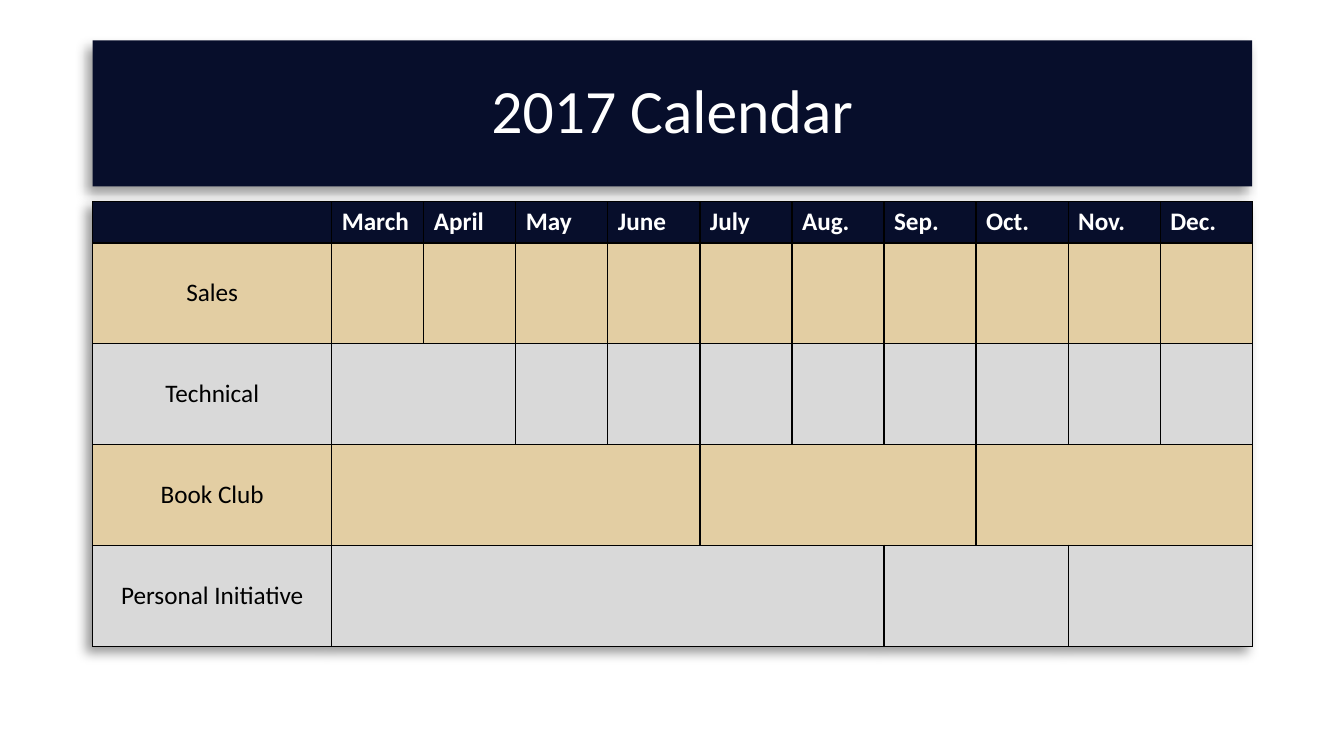
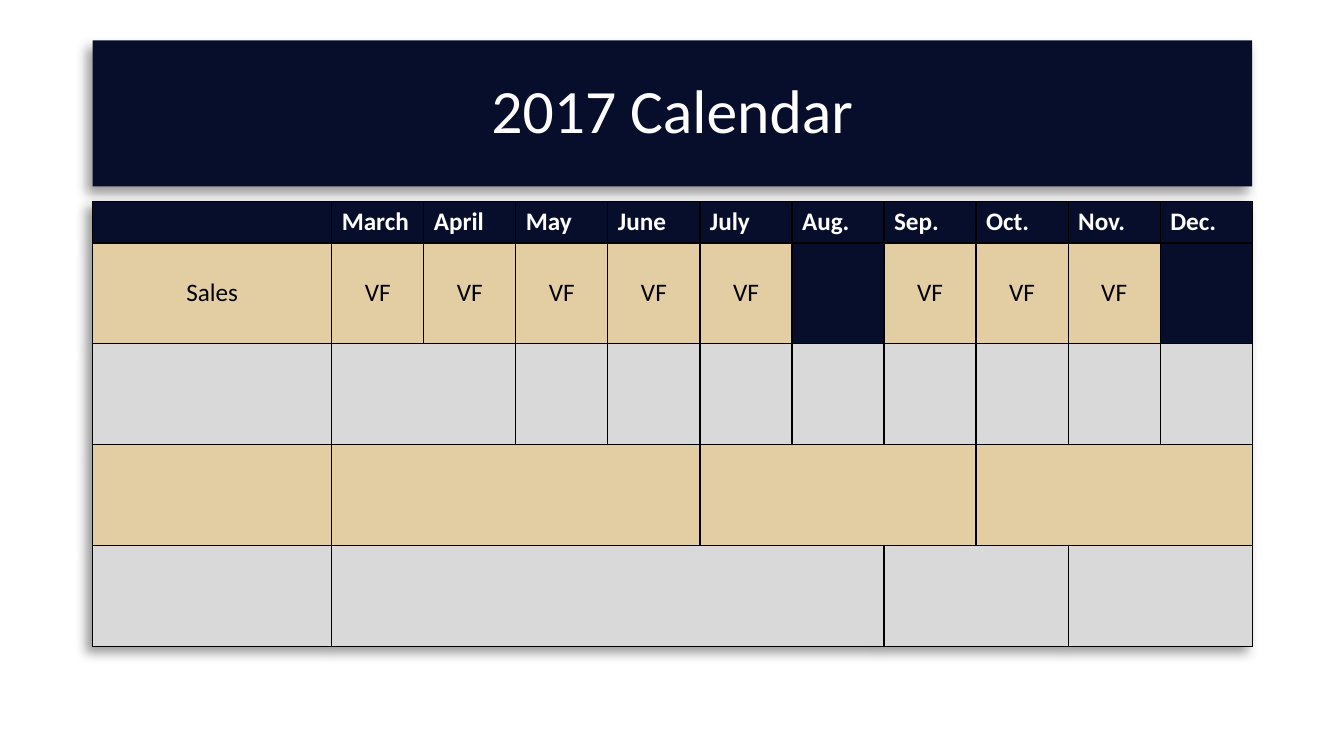
import pptx
import pptx.dml.color
import pptx.enum.shapes
import pptx.enum.text
import pptx.oxml
import pptx.oxml.ns
import pptx.util

Inches = pptx.util.Inches
Pt = pptx.util.Pt
RGBColor = pptx.dml.color.RGBColor
MIDDLE = pptx.enum.text.MSO_ANCHOR.MIDDLE
TOP = pptx.enum.text.MSO_ANCHOR.TOP
CENTER = pptx.enum.text.PP_ALIGN.CENTER
LEFT_ALIGNED = pptx.enum.text.PP_ALIGN.LEFT

# Shared look
NAVY = RGBColor(0x07, 0x0E, 0x2B)
SAND = RGBColor(0xE3, 0xCE, 0xA3)
GRAY = RGBColor(0xD9, 0xD9, 0xD9)
WHITE = RGBColor(0xFF, 0xFF, 0xFF)
BLACK = RGBColor(0x00, 0x00, 0x00)
FONT = "Calibri"

# Shared geometry, in inches
LEFT, WIDTH = 0.92, 11.5
TITLE_TOP, TITLE_HEIGHT = 0.4, 1.45
TABLE_TOP = 2
LABEL_WIDTH = 2.37
HEADER_HEIGHT, ROW_HEIGHT = 0.41, 1

# Calendar structure: months covered by each block of a row
MONTHS = ["March", "April", "May", "June", "July",
          "Aug.", "Sep.", "Oct.", "Nov.", "Dec."]
ROW_SPANS = [[1] * 10, [2] + [1] * 8, [4, 3, 3], [6, 2, 2]]
ROW_FILLS = [SAND, GRAY, SAND, GRAY]

# Slide content: row labels, sales entries by month, months without sales
CALENDARS = [
    (["Sales", "Technical", "Book Club", "Personal Initiative"], "", []),
    (["Sales", "", "", ""], "VF", ["Aug.", "Dec."]),
]


def add_shadow(properties, position):
    """Insert a soft shadow falling to the lower left."""
    effects = pptx.oxml.parse_xml(
        f'<a:effectLst {pptx.oxml.ns.nsdecls("a")}>'
        f'<a:outerShdw blurRad="{Pt(8)}" dist="{Pt(6)}" dir="8100000" '
        'algn="tr" rotWithShape="0">'
        f'<a:srgbClr val="{BLACK}"><a:alpha val="40000"/></a:srgbClr>'
        '</a:outerShdw></a:effectLst>')
    properties.insert(position, effects)


def add_run(paragraph, text, size, color, bold=False):
    run = paragraph.add_run()
    run.text = text
    run.font.name = FONT
    run.font.size = Pt(size)
    run.font.bold = bold
    run.font.color.rgb = color


def add_title(slide, text):
    shape = slide.shapes.add_shape(
        pptx.enum.shapes.MSO_SHAPE.RECTANGLE, Inches(LEFT),
        Inches(TITLE_TOP), Inches(WIDTH), Inches(TITLE_HEIGHT))
    shape.fill.solid()
    shape.fill.fore_color.rgb = NAVY
    shape.line.fill.background()
    properties = shape.element.spPr
    add_shadow(properties, len(properties))
    shape.text_frame.word_wrap = True
    shape.text_frame.vertical_anchor = MIDDLE
    paragraph = shape.text_frame.paragraphs[0]
    paragraph.alignment = CENTER
    paragraph.line_spacing = 0.9
    add_run(paragraph, text, 44, WHITE)


def add_borders(cell):
    properties = cell._tc.get_or_add_tcPr()
    for side in ("lnL", "lnR", "lnT", "lnB"):
        properties.append(pptx.oxml.parse_xml(
            f'<a:{side} {pptx.oxml.ns.nsdecls("a")} w="{Pt(1)}">'
            f'<a:solidFill><a:srgbClr val="{BLACK}"/></a:solidFill>'
            f'</a:{side}>'))


def fill_cell(cell, fill):
    cell.fill.solid()
    cell.fill.fore_color.rgb = fill


def write_cell(cell, text, header=False):
    cell.vertical_anchor = TOP if header else MIDDLE
    paragraph = cell.text_frame.paragraphs[0]
    paragraph.alignment = LEFT_ALIGNED if header else CENTER
    if text:
        add_run(paragraph, text, 18, WHITE if header else BLACK, header)


def add_calendar(slide, labels, sales_entry, closed_months):
    table_height = HEADER_HEIGHT + ROW_HEIGHT * len(labels)
    table = slide.shapes.add_table(
        len(labels) + 1, len(MONTHS) + 1, Inches(LEFT), Inches(TABLE_TOP),
        Inches(WIDTH), Inches(table_height)).table
    add_shadow(table._tbl.tblPr, 0)

    # Column widths and row heights
    month_width = (WIDTH - LABEL_WIDTH) / len(MONTHS)
    for index, column in enumerate(table.columns):
        column.width = Inches(month_width if index else LABEL_WIDTH)
    for index, row in enumerate(table.rows):
        row.height = Inches(ROW_HEIGHT if index else HEADER_HEIGHT)

    # Borders and row colours
    for row, fill in zip(table.rows, [NAVY] + ROW_FILLS):
        for cell in row.cells:
            add_borders(cell)
            fill_cell(cell, fill)

    # Header and row labels
    for column, month in enumerate(MONTHS, start=1):
        write_cell(table.cell(0, column), month, header=True)
    for row, label in enumerate(labels, start=1):
        write_cell(table.cell(row, 0), label)

    # Blocks of several months
    for row, spans in enumerate(ROW_SPANS, start=1):
        column = 1
        for span in spans:
            if span > 1:
                table.cell(row, column).merge(
                    table.cell(row, column + span - 1))
            column += span

    # Sales entries
    for column, month in enumerate(MONTHS, start=1):
        cell = table.cell(1, column)
        if month in closed_months:
            fill_cell(cell, NAVY)
        else:
            write_cell(cell, sales_entry)


def main():
    presentation = pptx.Presentation()
    presentation.slide_width = Inches(13.33)
    presentation.slide_height = Inches(7.5)
    for labels, sales_entry, closed_months in CALENDARS:
        slide = presentation.slides.add_slide(presentation.slide_layouts[6])
        add_title(slide, "2017 Calendar")
        add_calendar(slide, labels, sales_entry, closed_months)
    presentation.save("out.pptx")


if __name__ == "__main__":
    main()
